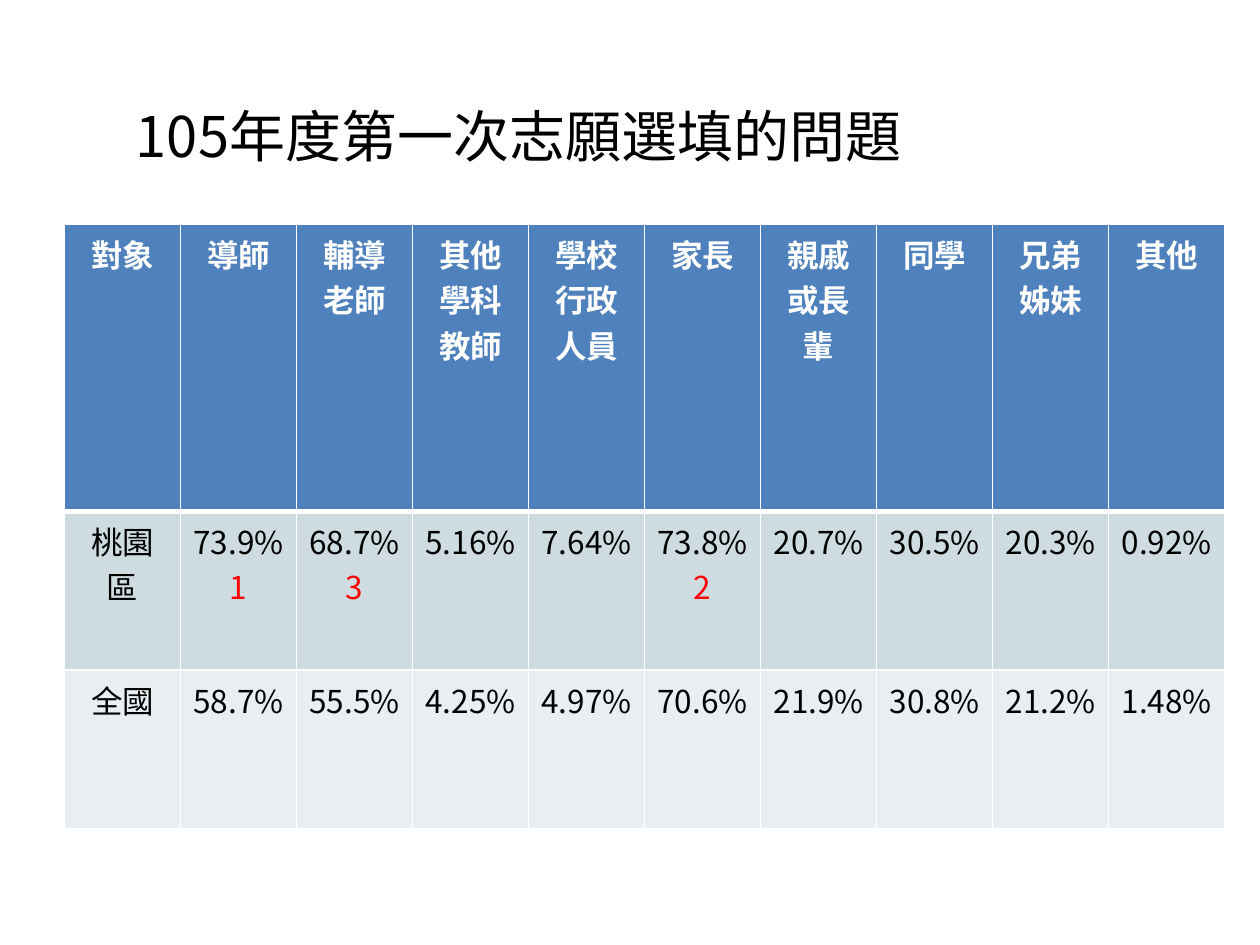
"""Build the slide on whom students consulted in the first 105 school-choice round."""
from dataclasses import dataclass

from lxml.etree import SubElement
from pptx import Presentation
from pptx.dml.color import RGBColor as Rgb
from pptx.enum.text import MSO_ANCHOR as Anchor, PP_ALIGN as Align
from pptx.oxml.ns import qn
from pptx.util import Cm, Pt


@dataclass(frozen=True)
class Theme:
    font: str = "Noto Sans CJK SC"
    title_size: int = 32
    cell_size: int = 18
    ink: str = "000000"
    rank: str = "FF0000"
    rule: str = "FFFFFF"
    thin: int = 1
    thick: int = 3


@dataclass(frozen=True)
class Band:
    entries: tuple[str, ...]
    height: float
    fill: str
    ink: str = Theme.ink
    bold: bool = False
    top: int = Theme.thin
    bottom: int = Theme.thin


THEME = Theme()
BANDS = (
    Band(("對象", "導師", "輔導老師", "其他學科教師", "學校行政人員", "家長",
          "親戚或長輩", "同學", "兄弟姊妹", "其他"),
         5.79, "4F81BD", ink="FFFFFF", bold=True, bottom=THEME.thick),
    Band(("桃園區", "73.9%\n1", "68.7%\n3", "5.16%", "7.64%", "73.8%\n2",
          "20.7%", "30.5%", "20.3%", "0.92%"),
         3.2, "CEDCE1", top=THEME.thick),
    Band(("全國", "58.7%", "55.5%", "4.25%", "4.97%", "70.6%",
          "21.9%", "30.8%", "21.2%", "1.48%"),
         3.2, "E8EEF1"),
)


def style_paragraph(paragraph, size: int, color: str, bold: bool = False) -> None:
    """Format every run for both Latin and East Asian text."""
    for run in paragraph.runs:
        run.font.size, run.font.bold = Pt(size), bold
        run.font.color.rgb = Rgb.from_string(color)
        run.font.name = THEME.font
        SubElement(run.font._element, qn("a:ea"), typeface=THEME.font)


def rule_cell(cell, band: Band) -> None:
    """Draw the four borders of a cell."""
    properties = cell._tc.get_or_add_tcPr()
    widths = {"L": THEME.thin, "R": THEME.thin, "T": band.top, "B": band.bottom}
    for position, (side, width) in enumerate(widths.items()):
        border = SubElement(properties, qn(f"a:ln{side}"), w=str(Pt(width)))
        SubElement(SubElement(border, qn("a:solidFill")), qn("a:srgbClr"), val=THEME.rule)
        properties.insert(position, border)


def fill_cell(cell, entry: str, band: Band) -> None:
    """Write one entry, with any rank below it in the rank colour."""
    cell.fill.solid()
    cell.fill.fore_color.rgb = Rgb.from_string(band.fill)
    rule_cell(cell, band)
    cell.text_frame.text = entry
    for line, paragraph in enumerate(cell.text_frame.paragraphs):
        paragraph.alignment = Align.CENTER
        style_paragraph(paragraph, THEME.cell_size, THEME.rank if line else band.ink, band.bold)


def add_title(slide, title: str) -> None:
    """Place the slide title."""
    frame = slide.shapes.add_textbox(Cm(2.49), Cm(1.93), Cm(16.41), Cm(1.6)).text_frame
    frame.word_wrap = True
    frame.vertical_anchor = Anchor.MIDDLE
    frame.text = title
    style_paragraph(frame.paragraphs[0], THEME.title_size, THEME.ink)


def add_survey(slide, bands: tuple[Band, ...]) -> None:
    """Place the survey table with equal columns."""
    survey = slide.shapes.add_table(
        len(bands), len(bands[0].entries), Cm(1.3), Cm(4.52), Cm(23.39),
        Cm(sum(band.height for band in bands))).table
    for row, band in zip(survey.rows, bands):
        row.height = Cm(band.height)
        for cell, entry in zip(row.cells, band.entries):
            fill_cell(cell, entry, band)


def main() -> None:
    """Build and save the slide."""
    deck = Presentation()
    deck.slide_width, deck.slide_height = Cm(25.4), Cm(19.05)
    slide = deck.slides.add_slide(deck.slide_layouts[6])
    add_survey(slide, BANDS)
    add_title(slide, "105年度第一次志願選填的問題")
    deck.save("out.pptx")


if __name__ == "__main__":
    main()
